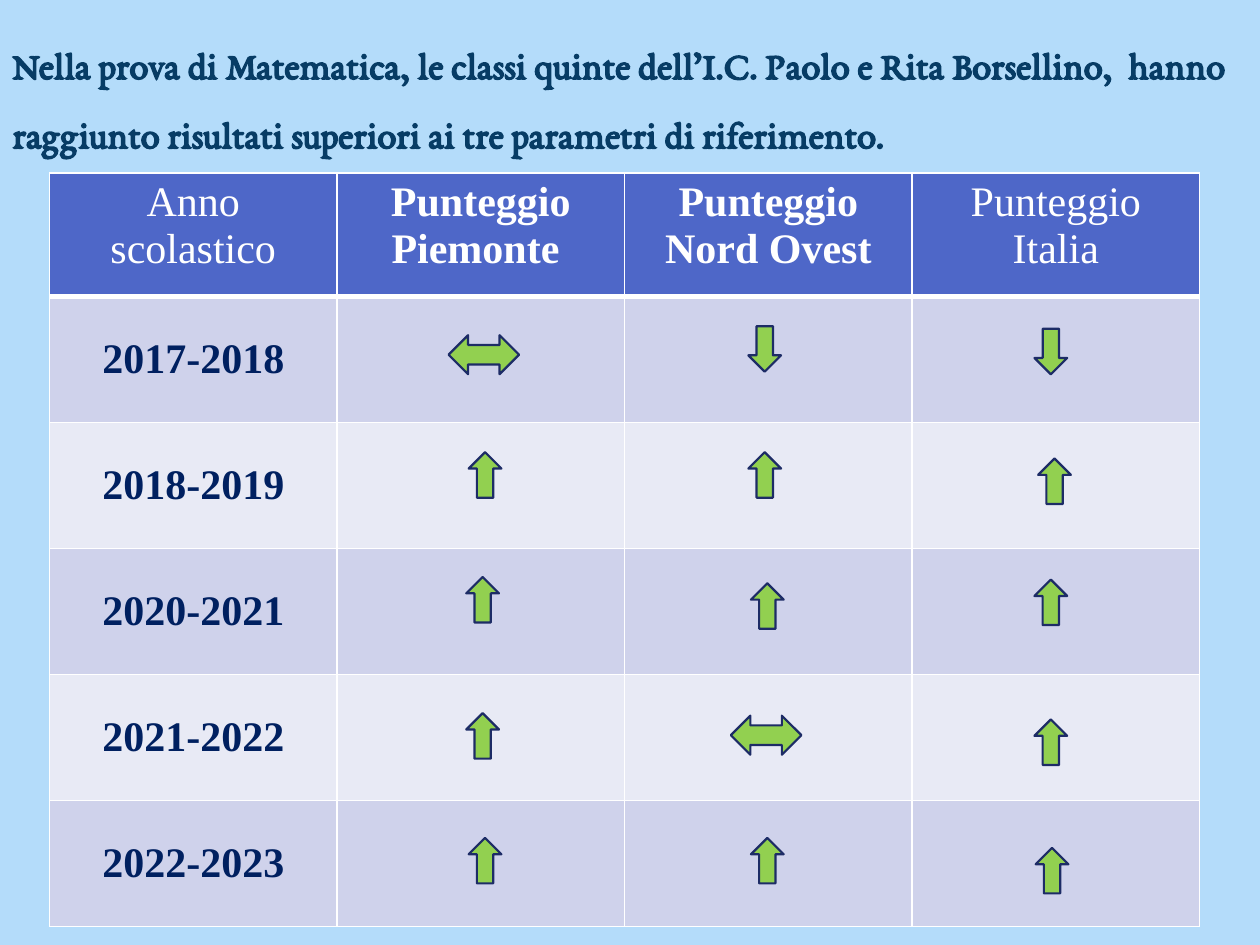
from lxml.etree import SubElement
from pptx import Presentation
from pptx.dml.color import RGBColor
from pptx.enum.shapes import MSO_SHAPE as Shape
from pptx.enum.text import MSO_ANCHOR as Anchor, MSO_AUTO_SIZE as AutoSize, PP_ALIGN as Align
from pptx.oxml.ns import qn
from pptx.util import Pt

TITLE = ("Nella prova di Matematica, le classi quinte dell’I.C. Paolo e Rita Borsellino,  hanno "
         "raggiunto risultati superiori ai tre parametri di riferimento.")
HEADERS = [("Anno scolastico", False), ("Punteggio Piemonte ", True),
           ("Punteggio Nord Ovest", True), ("Punteggio Italia", False)]

# Each school year with its arrows: direction, centre x, centre y
RESULTS = [
    ("2017-2018", [("same", 276.5, 202.7), ("down", 437, 199.4), ("down", 600.5, 200.9)]),
    ("2018-2019", [("up", 277.2, 271.4), ("up", 437, 271.4), ("up", 602.6, 275)]),
    ("2020-2021", [("up", 275.8, 342.7), ("up", 438.5, 346.3), ("up", 600.5, 344.2)]),
    ("2021-2022", [("up", 275.8, 420.5), ("same", 437.8, 420.1), ("up", 600.5, 424.1)]),
    ("2022-2023", [("up", 277.2, 491.8), ("up", 438.5, 491.8), ("up", 601.2, 497.5)]),
]
# Preset, width, height, rotation
ARROWS = {
    "up": (Shape.UP_ARROW, 18.7, 26, 0),
    "down": (Shape.UP_ARROW, 18.7, 26, 180),
    "same": (Shape.LEFT_RIGHT_ARROW, 40.3, 22.3, 0),
}
BAND_FILLS = ["CFD2EB", "E8EAF5"]
COLUMN_WIDTH, HEADER_HEIGHT, ROW_HEIGHT = 164.3, 70.5, 72


def color(value):
    return RGBColor.from_string(value)


def paint(fill, value):
    fill.solid()
    fill.fore_color.rgb = color(value)


def add_run(paragraph, text, font_name, size, value, bold=True):
    run = paragraph.add_run()
    run.text = text
    font = run.font
    font.name, font.size, font.bold = font_name, Pt(size), bold
    font.color.rgb = color(value)


def format_title(title):
    title.left, title.top, title.width, title.height = Pt(0), Pt(6.5), Pt(744), Pt(83)
    frame = title.text_frame
    frame.word_wrap = True
    frame.auto_size = AutoSize.SHAPE_TO_FIT_TEXT
    frame.vertical_anchor = Anchor.TOP
    paragraph = frame.paragraphs[0]
    paragraph.alignment = Align.LEFT
    paragraph.line_spacing = 1.5
    add_run(paragraph, TITLE, "EB Garamond", 22, "073C65")


def set_borders(cell, top=1, bottom=1):
    """Draw white cell borders; they must be added before the cell's fill."""
    properties = cell._tc.get_or_add_tcPr()
    for side, width in (("L", 1), ("R", 1), ("T", top), ("B", bottom)):
        line = SubElement(properties, qn(f"a:ln{side}"), w=str(Pt(width)))
        fill = SubElement(line, qn("a:solidFill"))
        SubElement(fill, qn("a:srgbClr"), val="FFFFFF")


def write_cell(cell, text, value, bold=True):
    paragraph = cell.text_frame.paragraphs[0]
    paragraph.alignment = Align.CENTER
    add_run(paragraph, text, "Times New Roman", 24, value, bold)


def add_results_table(slide):
    row_count, column_count = len(RESULTS) + 1, len(HEADERS)
    table = slide.shapes.add_table(
        row_count, column_count, Pt(28.3), Pt(98.8), Pt(COLUMN_WIDTH * column_count),
        Pt(HEADER_HEIGHT + ROW_HEIGHT * len(RESULTS))).table
    for column in table.columns:
        column.width = Pt(COLUMN_WIDTH)
    for index, row in enumerate(table.rows):
        row.height = Pt(ROW_HEIGHT if index else HEADER_HEIGHT)

    for column, (text, bold) in enumerate(HEADERS):
        cell = table.cell(0, column)
        set_borders(cell, bottom=3)
        paint(cell.fill, "4E67C8")
        write_cell(cell, text, "FFFFFF", bold)
    for row, (year, _) in enumerate(RESULTS, start=1):
        for column in range(column_count):
            cell = table.cell(row, column)
            set_borders(cell, top=3 if row == 1 else 1)
            paint(cell.fill, BAND_FILLS[(row - 1) % 2])
        year_cell = table.cell(row, 0)
        year_cell.vertical_anchor = Anchor.MIDDLE
        write_cell(year_cell, year, "002060")


def add_arrow(slide, direction, center_x, center_y):
    preset, width, height, rotation = ARROWS[direction]
    shape = slide.shapes.add_shape(preset, Pt(center_x - width / 2), Pt(center_y - height / 2),
                                   Pt(width), Pt(height))
    shape.rotation = rotation
    shape.shadow.inherit = False
    paint(shape.fill, "92D050")
    shape.line.color.rgb = color("1D2C66")
    shape.line.width = Pt(1.25)


def main():
    presentation = Presentation()
    presentation.slide_width, presentation.slide_height = Pt(720), Pt(540)
    slide = presentation.slides.add_slide(presentation.slide_layouts[5])
    paint(slide.background.fill, "B4DCFA")
    format_title(slide.shapes.title)
    add_results_table(slide)
    for _, arrows in RESULTS:
        for arrow in arrows:
            add_arrow(slide, *arrow)
    presentation.save("out.pptx")


if __name__ == "__main__":
    main()
